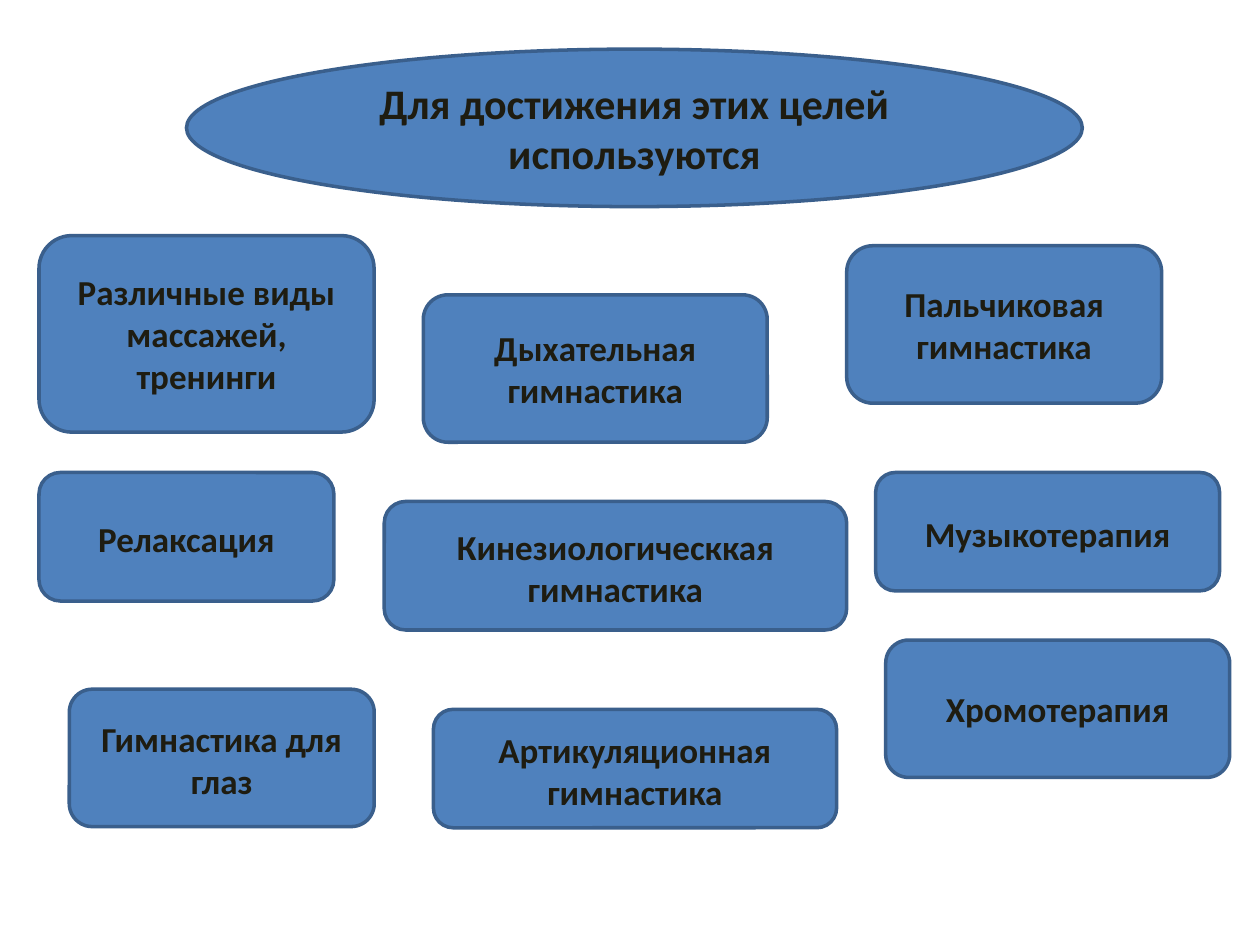
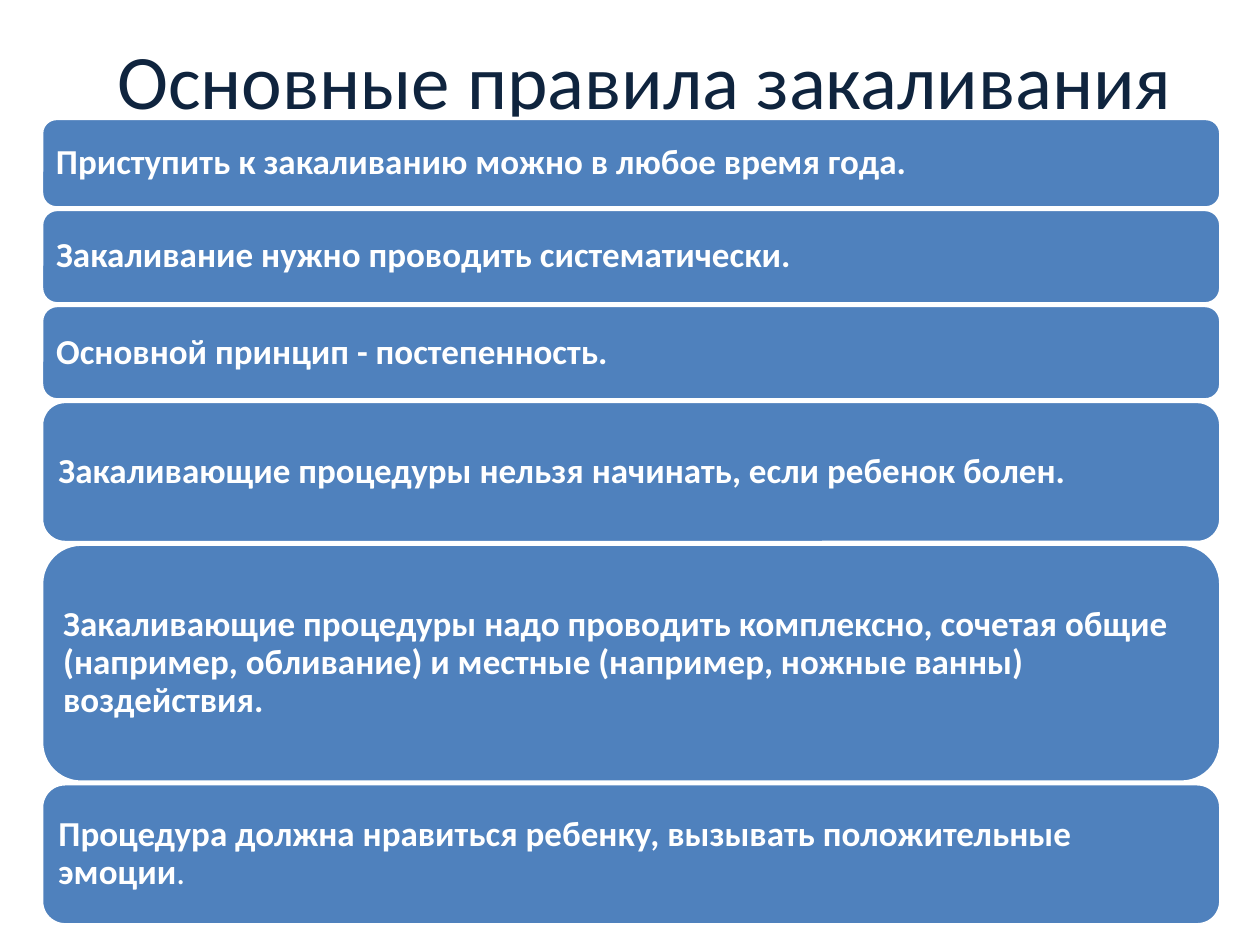
"""Build two slides on children's health practices and the rules of hardening."""
from pptx import Presentation
from pptx import util as u
from pptx.dml.color import RGBColor
from pptx.enum import shapes, text

BLUE, EDGE, WHITE, DARK, NAVY = "4F81BD", "3A5F8C", "FFFFFF", "1E1C11", "0F243E"
FONT = "Calibri"

GOAL = ("Для достижения этих целей используются", (1.48, 0.39, 7.11, 1.25))
LOWERED = 0.08
METHODS = [
    ("Пальчиковая гимнастика", (6.72, 1.95, 2.5, 1.25), 0.05),
    ("Артикуляционная гимнастика", (3.44, 5.63, 3.2, 0.94), LOWERED),
    ("Кинезиологическкая гимнастика", (3.05, 3.98, 3.67, 1.02), LOWERED),
    ("Музыкотерапия", (6.95, 3.75, 2.73, 0.94), LOWERED),
    ("Хромотерапия", (7.03, 5.08, 2.73, 1.09), 0.05),
    ("Релаксация", (0.31, 3.75, 2.34, 1.02), LOWERED),
    ("Дыхательная гимнастика", (3.36, 2.34, 2.73, 1.17), 0.05),
    ("Различные виды массажей, тренинги", (0.31, 1.87, 2.66, 1.56), 0.05),
    ("Гимнастика для глаз", (0.55, 5.47, 2.42, 1.09), LOWERED),
]

RULES_TITLE = ("Основные правила закаливания", (0.62, 0, 9, 1.25))
RULES = [
    (["Приступить к закаливанию можно в любое время года."], 0.71),
    (["Закаливание нужно проводить систематически."], 0.75),
    (["Основной принцип - постепенность."], 0.75),
    (["Закаливающие процедуры нельзя начинать, если ребенок болен."], 1.12),
    (["Закаливающие процедуры надо проводить комплексно, сочетая общие "
      "(например, обливание) и местные (например, ножные ванны) воздействия."], 1.89),
    (["Процедура должна нравиться ребенку, вызывать положительные эмоции", "."], 1.12),
]
RULES_LEFT, RULES_WIDTH, RULES_TOP, RULES_BOTTOM = 0.33, 9.36, 0.94, 7.34


def color(value):
    """Turn a hex string into a colour."""
    return RGBColor.from_string(value)


def write(shape, runs, size=20, ink=DARK, bold=True, align="CENTER",
          insets=(0.1, 0.05, 0.1, 0.05), spacing=1.0):
    """Write one paragraph in a shape; runs after the first are not bold."""
    frame = shape.text_frame
    frame.word_wrap = True
    frame.vertical_anchor = text.MSO_ANCHOR.MIDDLE
    frame.margin_left, frame.margin_top, frame.margin_right, frame.margin_bottom = map(
        u.Inches, insets)
    paragraph = frame.paragraphs[0]
    paragraph.alignment = text.PP_ALIGN[align]
    paragraph.line_spacing = spacing
    for index, words in enumerate(runs):
        run = paragraph.add_run()
        run.text = words
        run.font.name = FONT
        run.font.size = u.Pt(size)
        run.font.bold = bold and index == 0
        run.font.color.rgb = color(ink)


def add_box(slide, box, kind="ROUNDED_RECTANGLE", edge=EDGE):
    """Add a blue preset shape with a two-point outline."""
    shape = slide.shapes.add_shape(shapes.MSO_SHAPE[kind], *map(u.Inches, box))
    shape.shadow.inherit = False
    shape.fill.solid()
    shape.fill.fore_color.rgb = color(BLUE)
    shape.line.color.rgb = color(edge)
    shape.line.width = u.Pt(2)
    return shape


def build_methods(slide):
    """Draw the goal ellipse and the boxes that name the methods."""
    words, box = GOAL
    write(add_box(slide, box, kind="OVAL"), [words], size=24)
    for words, box, top_inset in METHODS:
        write(add_box(slide, box), [words], insets=(0.1, top_inset, 0.1, 0.05))


def build_rules(slide):
    """Draw the title and stack the rule bars with equal gaps."""
    words, box = RULES_TITLE
    title = slide.shapes.add_textbox(*map(u.Inches, box))
    write(title, [words], size=44, ink=NAVY, bold=False)
    used = sum(height for _, height in RULES)
    gap = (RULES_BOTTOM - RULES_TOP - used) / (len(RULES) - 1)
    top = RULES_TOP
    for runs, height in RULES:
        bar = add_box(slide, (RULES_LEFT, top, RULES_WIDTH, height), edge=WHITE)
        write(bar, runs, ink=WHITE, align="LEFT", insets=(0.08,) * 4, spacing=0.9)
        top += height + gap


def main():
    """Create and save the presentation."""
    presentation = Presentation()
    presentation.slide_width, presentation.slide_height = u.Inches(10), u.Inches(7.5)
    for build in (build_methods, build_rules):
        slide = presentation.slides.add_slide(presentation.slide_layouts[6])
        slide.background.fill.solid()
        slide.background.fill.fore_color.rgb = color(WHITE)
        build(slide)
    presentation.save("out.pptx")


if __name__ == "__main__":
    main()
